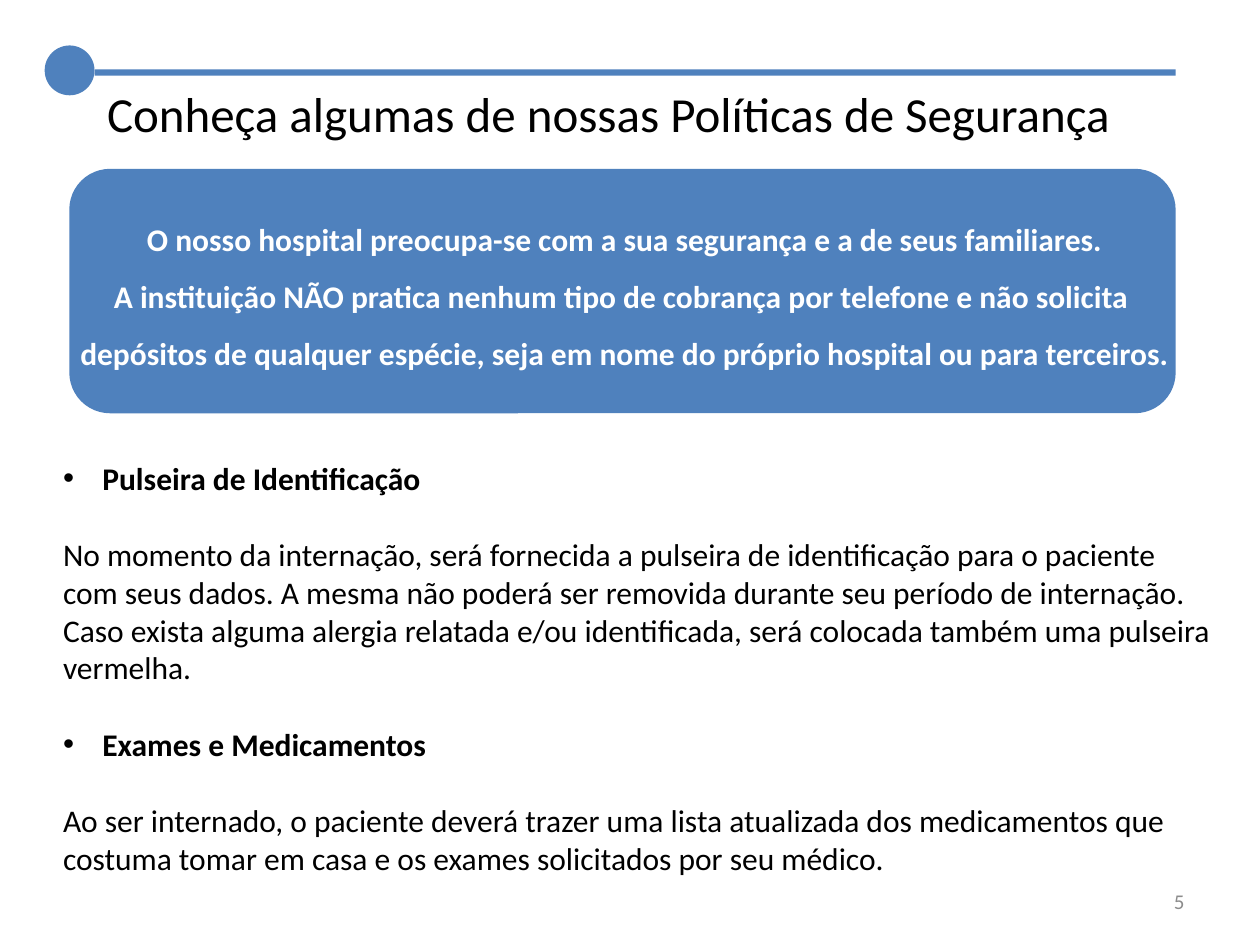
import pptx
import pptx.dml.color
import pptx.enum.shapes
import pptx.enum.text
import pptx.oxml
import pptx.oxml.ns
import pptx.util
from dataclasses import dataclass

Pt = pptx.util.Pt
Shape = pptx.enum.shapes.MSO_SHAPE
Align = pptx.enum.text.PP_ALIGN
Anchor = pptx.enum.text.MSO_ANCHOR

TITLE = "Conheça algumas de nossas Políticas de Segurança"
NOTICE = [
    "O nosso hospital preocupa-se com a sua segurança e a de seus familiares.",
    "A instituição NÃO pratica nenhum tipo de cobrança por telefone e não solicita ",
    "depósitos de qualquer espécie, seja em nome do próprio hospital ou para terceiros.",
]
POLICIES = [
    ("Pulseira de Identificação", [
        "No momento da internação, será fornecida a pulseira de identificação para o paciente",
        "com seus dados. A mesma não poderá ser removida durante seu período de internação.",
        "Caso exista alguma alergia relatada e/ou identificada, será colocada também uma pulseira",
        "vermelha.",
    ]),
    ("Exames e Medicamentos", [
        "Ao ser internado, o paciente deverá trazer uma lista atualizada dos medicamentos que ",
        "costuma tomar em casa e os exames solicitados por seu médico. ",
    ]),
]
PAGE_NUMBER = "5"


@dataclass(frozen=True)
class Theme:
    font: str = "Calibri"
    accent: str = "4F81BD"
    text: str = "000000"
    inverse: str = "FFFFFF"
    muted: str = "8C8C8C"
    title_size: float = 28
    body_size: float = 18
    number_size: float = 12
    line_gap: float = 22
    bullet_indent: float = 22.5


THEME = Theme()


def place(shape, left, top, width, height):
    shape.left, shape.top, shape.width, shape.height = map(Pt, (left, top, width, height))


def prepare_frame(shape, wrap=False, anchor=Anchor.TOP):
    frame = shape.text_frame
    frame.auto_size = pptx.enum.text.MSO_AUTO_SIZE.NONE
    frame.word_wrap = wrap
    frame.vertical_anchor = anchor
    return frame


def set_bullet(paragraph, bullet):
    properties = paragraph._p.get_or_add_pPr()
    indent = Pt(THEME.bullet_indent) if bullet else 0
    properties.set("marL", str(indent))
    properties.set("indent", str(-indent))
    namespace = pptx.oxml.ns.nsdecls("a")
    if bullet:
        properties.append(pptx.oxml.parse_xml(f'<a:buFont {namespace} typeface="Arial"/>'))
        properties.append(pptx.oxml.parse_xml(f'<a:buChar {namespace} char="•"/>'))
    else:
        properties.append(pptx.oxml.parse_xml(f"<a:buNone {namespace}/>"))


def write(frame, text, size=THEME.body_size, color=THEME.text, bold=False,
          align=Align.LEFT, spacing=1.0, before=0, bullet=False):
    """Fill the frame's first paragraph, or add one after text already there."""
    paragraph = frame.add_paragraph() if frame.text else frame.paragraphs[0]
    paragraph.alignment = align
    paragraph.line_spacing = spacing
    paragraph.space_before = Pt(before)
    paragraph.space_after = Pt(0)
    set_bullet(paragraph, bullet)
    run = paragraph.add_run()
    run.text = text
    run.font.name = THEME.font
    run.font.size = Pt(size)
    run.font.bold = bold
    run.font.color.rgb = pptx.dml.color.RGBColor.from_string(color)


def add_block(slide, kind, *box):
    shape = slide.shapes.add_shape(kind, *map(Pt, box))
    shape.shadow.inherit = False
    shape.fill.solid()
    shape.fill.fore_color.rgb = pptx.dml.color.RGBColor.from_string(THEME.accent)
    shape.line.fill.background()


def add_text_box(slide, *box, **options):
    return prepare_frame(slide.shapes.add_textbox(*map(Pt, box)), **options)


def main():
    presentation = pptx.Presentation()
    presentation.slide_width, presentation.slide_height = Pt(720), Pt(540)
    slide = presentation.slides.add_slide(presentation.slide_layouts[1])
    title, body = slide.placeholders

    add_block(slide, Shape.OVAL, 25.5, 26, 28.5, 28.5)
    add_block(slide, Shape.RECTANGLE, 54, 39.6, 617.8, 3.6)

    place(title, 54, 44, 594, 41)
    write(prepare_frame(title), TITLE, size=THEME.title_size)

    place(body, 28.8, 258.5, 678.2, 247)
    frame = prepare_frame(body)
    for index, (heading, lines) in enumerate(POLICIES):
        write(frame, heading, bold=True, bullet=True, before=THEME.line_gap if index else 0)
        for number, line in enumerate(lines):
            write(frame, line, align=Align.JUSTIFY, before=0 if number else THEME.line_gap)

    add_block(slide, Shape.ROUNDED_RECTANGLE, 39.6, 96.5, 632.2, 139.7)
    notice = add_text_box(slide, 36.7, 111.6, 640.8, 102.2)
    for line in NOTICE:
        write(notice, line, color=THEME.inverse, bold=True, align=Align.CENTER, spacing=1.5)

    number = add_text_box(slide, 516, 500.5, 168, 28.8, wrap=True, anchor=Anchor.MIDDLE)
    write(number, PAGE_NUMBER, size=THEME.number_size, color=THEME.muted, align=Align.RIGHT)

    presentation.save("out.pptx")


if __name__ == "__main__":
    main()
